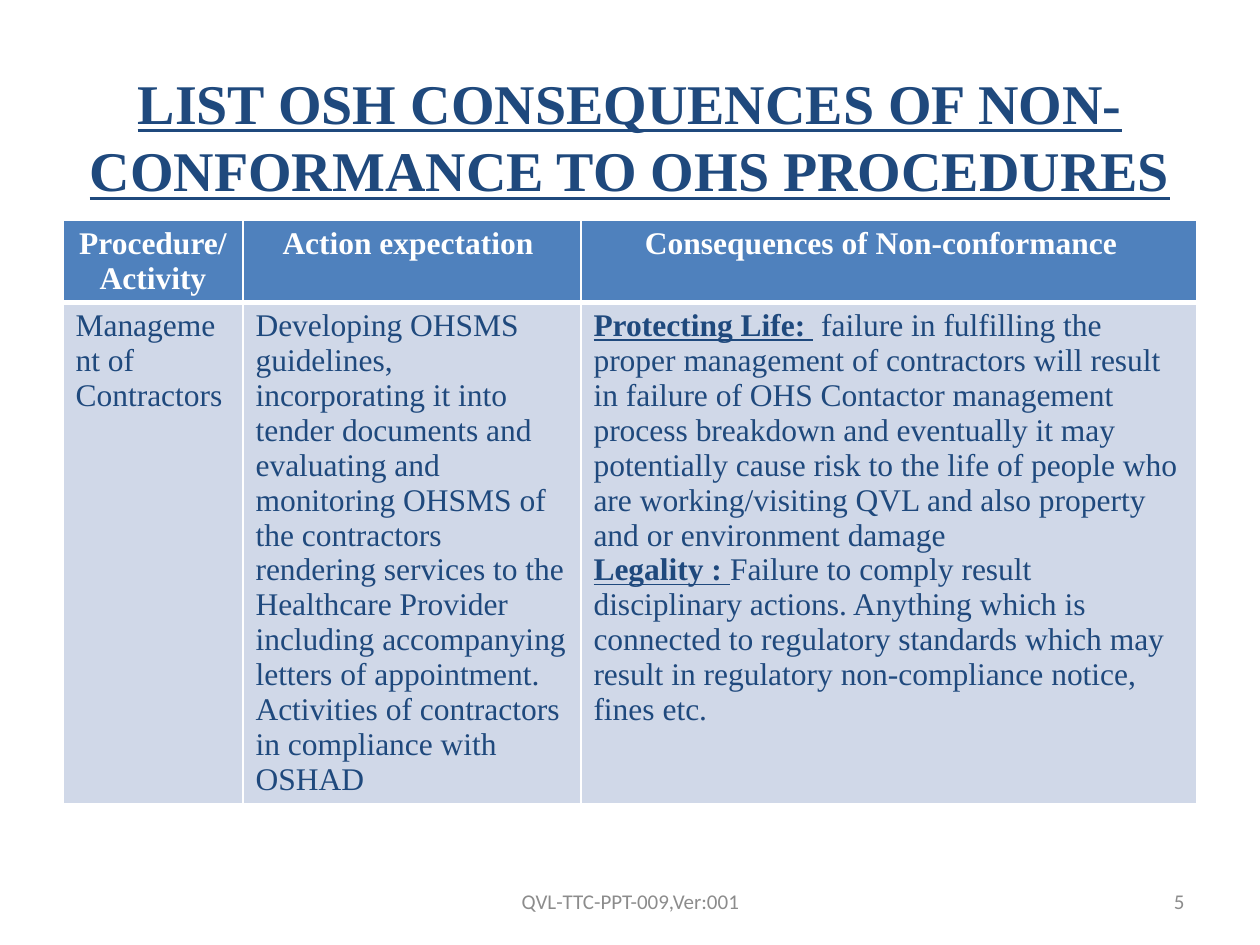
from dataclasses import dataclass

from lxml import etree
from pptx import Presentation
from pptx import util as u
from pptx.dml.color import RGBColor
from pptx.enum import text
from pptx.oxml import ns

PX = u.Inches(1) / 126


@dataclass(frozen=True)
class Theme:
    serif: str = "Times New Roman"
    sans: str = "Calibri"
    navy: str = "1F497D"
    blue: str = "4F81BD"
    pale: str = "D0D8E8"
    white: str = "FFFFFF"
    grey: str = "8C8C8C"
    title_size: int = 32
    table_size: int = 18
    footer_size: int = 12


def px(n):
    return u.Emu(round(n * PX))


def style_run(r, font, size, color, bold=False, underline=False):
    f = r.font
    f.name, f.size, f.bold, f.underline = font, u.Pt(size), bold, underline
    f.color.rgb = RGBColor.from_string(color)


def set_borders(cell, color, **widths):
    """Add cell edges, named L, R, T, B in schema order, with widths in points."""
    tc_pr = cell._tc.get_or_add_tcPr()
    for side, width in widths.items():
        ln = etree.SubElement(tc_pr, ns.qn(f"a:ln{side}"), w=str(u.Pt(width)))
        fill = etree.SubElement(ln, ns.qn("a:solidFill"))
        etree.SubElement(fill, ns.qn("a:srgbClr"), val=color)


class SlideBuilder:
    def __init__(self, prs, theme):
        self.theme = theme
        self.s = prs.slides.add_slide(prs.slide_layouts[5])

    def title(self, words, x, y, w, h):
        t = self.theme
        sp = self.s.shapes.title
        sp.left, sp.top, sp.width, sp.height = map(px, (x, y, w, h))
        tf = sp.text_frame
        tf.text = words
        tf.word_wrap = True
        tf.auto_size = text.MSO_AUTO_SIZE.NONE
        tf.vertical_anchor = text.MSO_ANCHOR.MIDDLE
        p = tf.paragraphs[0]
        p.alignment = text.PP_ALIGN.CENTER
        style_run(p.runs[0], t.serif, t.title_size, t.navy, True, True)

    def footer(self, words, x, y, w, h, align):
        t = self.theme
        tf = self.s.shapes.add_textbox(*map(px, (x, y, w, h))).text_frame
        tf.text = words
        tf.word_wrap = True
        tf.vertical_anchor = text.MSO_ANCHOR.MIDDLE
        p = tf.paragraphs[0]
        p.alignment = align
        style_run(p.runs[0], t.sans, t.footer_size, t.grey)

    def table(self, header, rows, x, y, col_widths, row_heights):
        """Each body cell is a list of (bold lead-in, wording) paragraphs."""
        table = self.s.shapes.add_table(
            len(rows) + 1, len(header), *map(px, (x, y, sum(col_widths), sum(row_heights)))
        ).table
        table.horz_banding = False
        for col, width in zip(table.columns, col_widths):
            col.width = px(width)
        for row, height in zip(table.rows, row_heights):
            row.height = px(height)
        for c, words in enumerate(header):
            self.cell(table.cell(0, c), [("", words)], True)
        for r, row in enumerate(rows, 1):
            for c, paragraphs in enumerate(row):
                self.cell(table.cell(r, c), paragraphs, False, top=3 if r == 1 else 1)

    def cell(self, cell, paragraphs, is_header, top=1):
        t = self.theme
        set_borders(cell, t.white, L=1, R=1, T=top, B=3 if is_header else 1)
        cell.fill.solid()
        cell.fill.fore_color.rgb = RGBColor.from_string(t.blue if is_header else t.pale)
        color = t.white if is_header else t.navy
        tf = cell.text_frame
        for i, (lead, words) in enumerate(paragraphs):
            p = tf.add_paragraph() if i else tf.paragraphs[0]
            p.alignment = text.PP_ALIGN.CENTER if is_header else text.PP_ALIGN.LEFT
            for part, is_lead in ((lead, True), (words, False)):
                if part:
                    r = p.add_run()
                    r.text = part
                    style_run(r, t.serif, t.table_size, color, is_header or is_lead, is_lead)


ORGANISATION = "QVL"
HEADER = ["Procedure/Activity", "Action expectation ", "Consequences of Non-conformance  "]
CONTRACTORS = [
    [("", "Management of"), ("", "Contractors")],
    [
        ("", "Developing OHSMS guidelines, incorporating it into tender documents and "
             "evaluating and monitoring OHSMS of the contractors rendering services to the "
             "Healthcare Provider including accompanying letters of appointment."),
        ("", "Activities of contractors in compliance with OSHAD"),
    ],
    [
        ("Protecting Life: ",
         " failure in fulfilling the proper management of contractors will result in failure "
         "of OHS Contactor management process breakdown and eventually it may potentially "
         f"cause risk to the life of people who are working/visiting {ORGANISATION} and also "
         "property and or environment damage"),
        ("Legality : ",
         "Failure to comply result disciplinary actions. Anything which is connected to "
         "regulatory standards which may result in regulatory non-compliance notice, "
         "fines etc."),
    ],
]


def main():
    prs = Presentation()
    prs.slide_width, prs.slide_height = px(1260), px(945)
    slide = SlideBuilder(prs, Theme())
    slide.title("LIST OSH CONSEQUENCES OF NON-CONFORMANCE TO OHS PROCEDURES", 63, 38, 1134, 196)
    slide.table(HEADER, [CONTRACTORS], 63, 220, (180, 338, 616), (82, 500))
    slide.footer("5", 903, 876, 294, 50, text.PP_ALIGN.RIGHT)
    slide.footer(f"{ORGANISATION}-TTC-PPT-009,Ver:001", 431, 876, 399, 50, text.PP_ALIGN.CENTER)
    prs.save("out.pptx")


if __name__ == "__main__":
    main()
